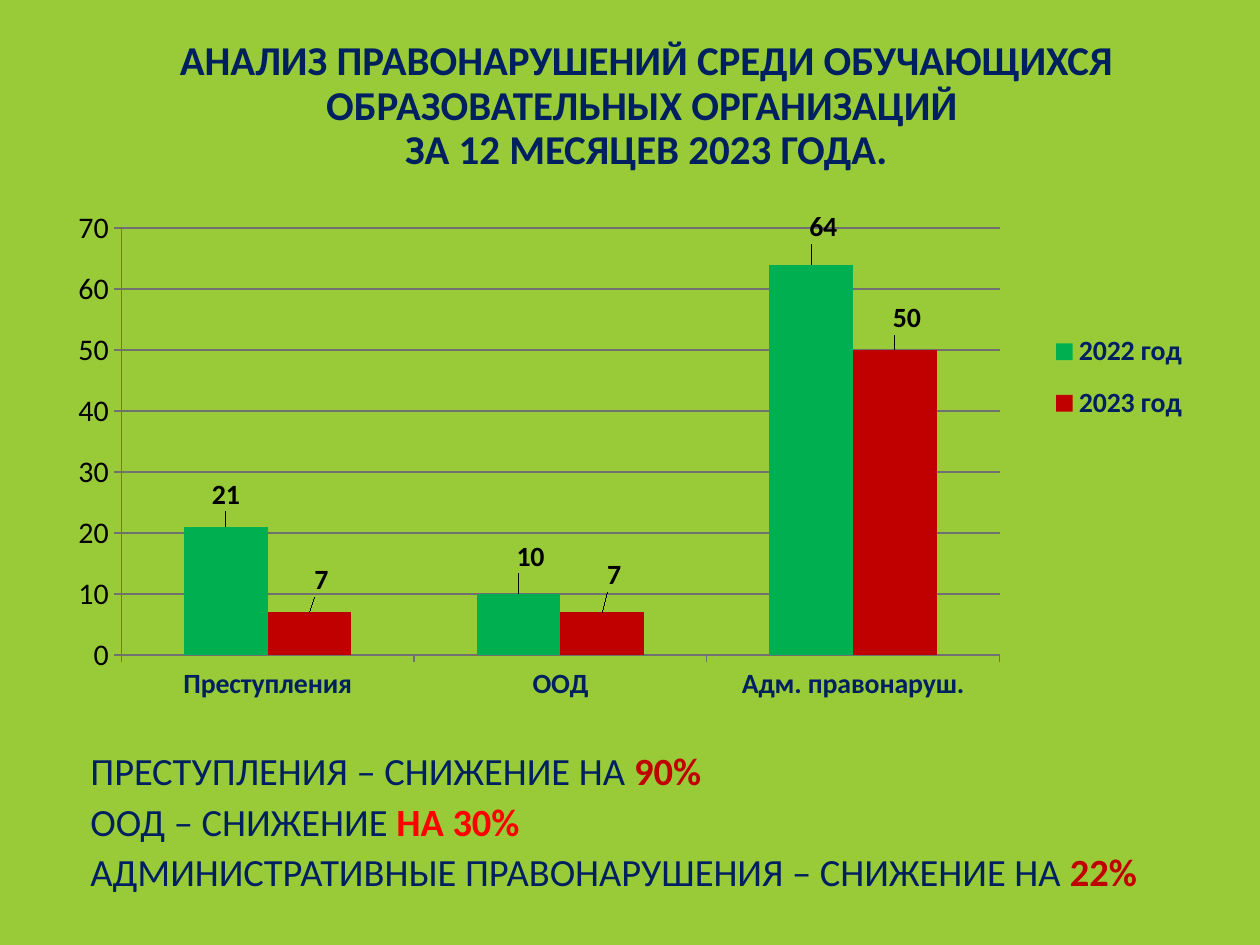
import pptx
import pptx.util
import pptx.chart.data
import pptx.oxml
import pptx.oxml.ns
from pptx.dml.color import RGBColor
from pptx.enum.chart import (XL_CHART_TYPE, XL_LABEL_POSITION,
                             XL_LEGEND_POSITION, XL_TICK_MARK)
from pptx.enum.text import MSO_ANCHOR, PP_ALIGN

LIME = RGBColor(0x99, 0xCB, 0x38)
NAVY = RGBColor(0x00, 0x20, 0x60)
GREEN = RGBColor(0x00, 0xB0, 0x50)
WINE = RGBColor(0xC0, 0x00, 0x00)
RED = RGBColor(0xFF, 0x00, 0x00)
BLACK = RGBColor(0x00, 0x00, 0x00)
GRAY = RGBColor(0x70, 0x70, 0x70)

FACE = "Calibri"
WIDE, HIGH = pptx.util.Inches(10), pptx.util.Inches(7.5)

TITLE = ["АНАЛИЗ ПРАВОНАРУШЕНИЙ СРЕДИ ОБУЧАЮЩИХСЯ ОБРАЗОВАТЕЛЬНЫХ ОРГАНИЗАЦИЙ ",
         "ЗА 12 МЕСЯЦЕВ 2023 ГОДА."]
CATS = ["Преступления", "ООД", "Адм. правонаруш."]
# Name, values, colour, label shifts as shares of the chart
BARS = [
    ("2022 год", (21, 10, 64), GREEN, ((0, -0.02), (0.01, -0.03), (0.01, -0.03))),
    ("2023 год", (7, 7, 50), WINE, ((0.01, -0.02), (0.01, -0.03), (0.01, -0.02))),
]
NOTES = [
    ("ПРЕСТУПЛЕНИЯ – СНИЖЕНИЕ НА ", "90%", WINE),
    ("ООД – СНИЖЕНИЕ ", "НА 30%", RED),
    ("АДМИНИСТРАТИВНЫЕ ПРАВОНАРУШЕНИЯ – СНИЖЕНИЕ НА ", "22%", WINE),
]


def place(x, y, w, h):
    """Turn shares of the slide into lengths."""
    return int(x * WIDE), int(y * HIGH), int(w * WIDE), int(h * HIGH)


def style(font, size, color, bold=False):
    font.name, font.size, font.bold = FACE, pptx.util.Pt(size), bold
    font.color.rgb = color


def add_box(slide, area, anchor):
    frame = slide.shapes.add_textbox(*place(*area)).text_frame
    frame.word_wrap = True
    frame.vertical_anchor = anchor
    return frame


def add_run(para, text, size, color, bold=False):
    run = para.add_run()
    run.text = text
    style(run.font, size, color, bold)


def add_title(slide):
    frame = add_box(slide, (0.042, 0.023, 0.942, 0.167), MSO_ANCHOR.BOTTOM)
    para = frame.paragraphs[0]
    para.alignment, para.line_spacing = PP_ALIGN.CENTER, 0.9
    for i, line in enumerate(TITLE):
        if i:
            para.add_line_break()
        add_run(para, line, 23.4, NAVY, True)


def add_notes(slide):
    frame = add_box(slide, (0.058, 0.777, 0.9, 0.178), MSO_ANCHOR.MIDDLE)
    for i, (text, share, color) in enumerate(NOTES):
        para = frame.add_paragraph() if i else frame.paragraphs[0]
        para.line_spacing = 1.1
        para._p.get_or_add_pPr().set("marL", str(pptx.util.Inches(0.04)))
        add_run(para, text, 22, NAVY)
        add_run(para, share, 22, color, True)


def set_layout(owner, index, head="", **parts):
    """Put a manual layout at the given child index of a chart part."""
    for old in owner.findall(pptx.oxml.ns.qn("c:layout")):
        owner.remove(old)
    body = head + "".join(f'<c:{k} val="{v}"/>' for k, v in parts.items())
    owner.insert(index, pptx.oxml.parse_xml(
        f'<c:layout {pptx.oxml.ns.nsdecls("c")}>'
        f'<c:manualLayout>{body}</c:manualLayout></c:layout>'))


def style_line(line):
    line.color.rgb, line.width = GRAY, pptx.util.Pt(0.75)


def style_bars(bars, color, shifts):
    bars.format.fill.solid()
    bars.format.fill.fore_color.rgb = color
    bars.invert_if_negative = False
    labels = bars.data_labels
    labels.show_value = True
    labels.position = XL_LABEL_POSITION.OUTSIDE_END
    style(labels.font, 15.9, BLACK, True)
    for i in range(len(shifts)):
        label = bars.points[i].data_label
        style(label.font, 15.9, BLACK, True)
        label.position = XL_LABEL_POSITION.OUTSIDE_END
    tags = labels._element.findall(pptx.oxml.ns.qn("c:dLbl"))
    for tag, (x, y) in zip(tags, shifts):
        set_layout(tag, 1, x=x, y=y)


def add_chart(slide):
    data = pptx.chart.data.CategoryChartData()
    data.categories = CATS
    for name, vals, _, _ in BARS:
        data.add_series(name, vals)
    chart = slide.shapes.add_chart(
        XL_CHART_TYPE.COLUMN_CLUSTERED,
        *place(0.031, 0.219, 0.947, 0.531), data).chart
    chart.has_title = False
    style(chart.font, 17.1, BLACK)

    # Bars
    plot = chart.plots[0]
    plot.gap_width, plot.overlap, plot.vary_by_categories = 150, 0, False
    for bars, (_, _, color, shifts) in zip(plot.series, BARS):
        style_bars(bars, color, shifts)

    # Axes
    for axis in (chart.category_axis, chart.value_axis):
        axis.major_tick_mark = XL_TICK_MARK.OUTSIDE
        axis.minor_tick_mark = XL_TICK_MARK.NONE
        style_line(axis.format.line)
    style(chart.category_axis.tick_labels.font, 15.9, NAVY, True)
    axis = chart.value_axis
    axis.minimum_scale, axis.maximum_scale, axis.major_unit = 0, 70, 10
    axis.has_major_gridlines = True
    style_line(axis.major_gridlines.format.line)
    style(axis.tick_labels.font, 17.1, BLACK)

    # Legend and plot area
    chart.has_legend = True
    legend = chart.legend
    legend.position = XL_LEGEND_POSITION.RIGHT
    legend.include_in_layout = False
    style(legend.font, 15.9, NAVY, True)
    modes = '<c:xMode val="edge"/><c:yMode val="edge"/>'
    set_layout(legend._element, 1, modes, x=0.84, y=0.22, w=0.13, h=0.24)
    area = chart._chartSpace.chart.plotArea
    set_layout(area, 0, '<c:layoutTarget val="inner"/>' + modes,
               x=0.069, y=0.042, w=0.736, h=0.851)


def main():
    deck = pptx.Presentation()
    deck.slide_width, deck.slide_height = WIDE, HIGH
    slide = deck.slides.add_slide(deck.slide_layouts[6])
    slide.background.fill.solid()
    slide.background.fill.fore_color.rgb = LIME
    add_title(slide)
    add_notes(slide)
    add_chart(slide)
    deck.save("out.pptx")


if __name__ == "__main__":
    main()
